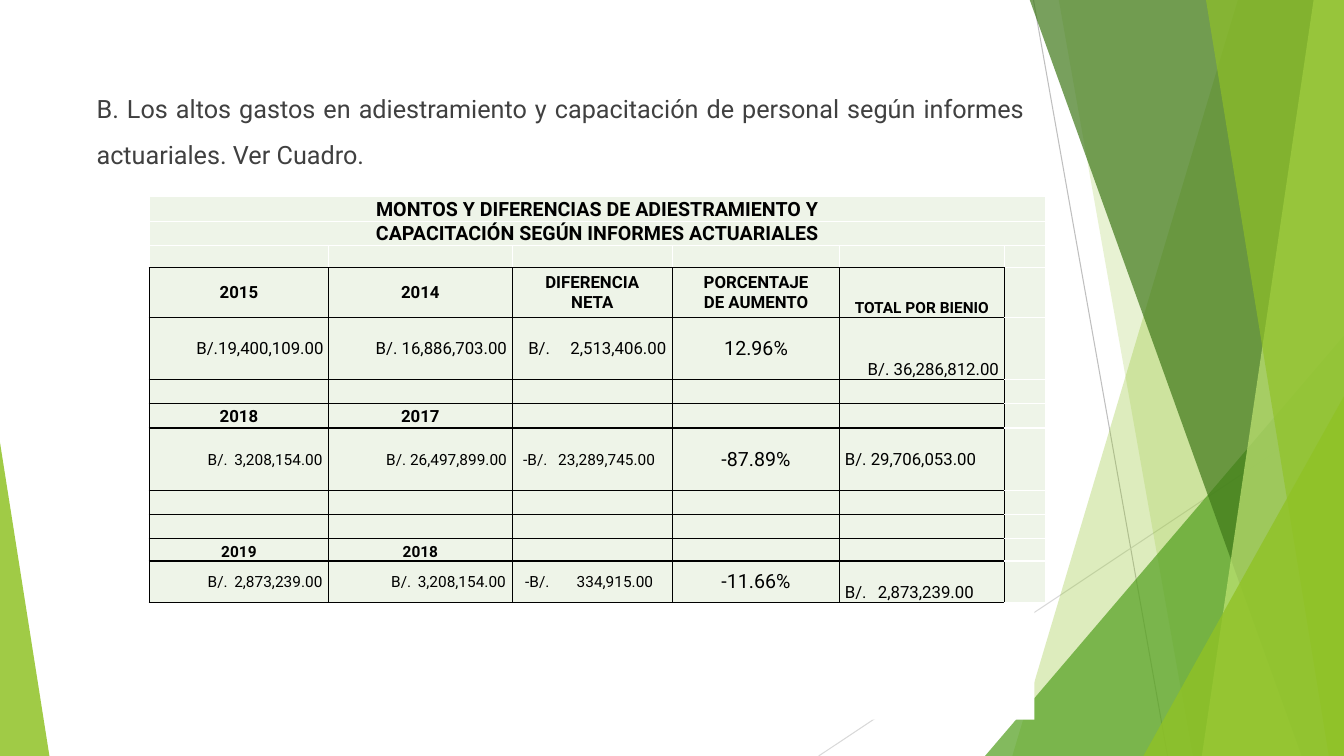
from dataclasses import dataclass

from lxml import etree
from pptx import Presentation
from pptx.dml.color import RGBColor
from pptx.enum.shapes import MSO_CONNECTOR, MSO_SHAPE
from pptx.enum.text import MSO_ANCHOR, PP_ALIGN
from pptx.oxml.ns import qn
from pptx.util import Inches, Pt

STRAIGHT = MSO_CONNECTOR.STRAIGHT
TRIANGLE = MSO_SHAPE.ISOSCELES_TRIANGLE
LEFT, CENTER, RIGHT, JUSTIFY = PP_ALIGN.LEFT, PP_ALIGN.CENTER, PP_ALIGN.RIGHT, PP_ALIGN.JUSTIFY
MIDDLE, BOTTOM = MSO_ANCHOR.MIDDLE, MSO_ANCHOR.BOTTOM


@dataclass(frozen=True)
class Theme:
    font: str = "Roboto"
    lime: str = "90C226"
    pale_lime: str = "C0E474"
    green: str = "54A021"
    forest: str = "3F7819"
    white: str = "FFFFFF"
    black: str = "000000"
    body_text: str = "404040"
    cell: str = "EEF4E8"
    dark_rule: str = "BFBFBF"
    light_rule: str = "D9D9D9"
    body: int = 18
    large: int = 14
    normal: int = 12
    small: int = 11


T = Theme()


@dataclass
class Entry:
    """Cell content; tab = (start, end) sets the text start and a right tab stop."""
    text: str = ""
    size: int = T.small
    align: PP_ALIGN = CENTER
    bold: bool = False
    anchor: MSO_ANCHOR = MIDDLE
    tab: tuple = None


class SlideBuilder:
    def __init__(self, slide, theme):
        self.s, self.t = slide, theme

    def style_text(self, p, size, color, bold=False):
        f = p.font
        f.name, f.size, f.bold = self.t.font, Pt(size), bold
        f.color.rgb = RGBColor.from_string(color)

    def paint(self, sp, color, opacity):
        sp.shadow.inherit = False
        sp.line.fill.background()
        sp.fill.solid()
        sp.fill.fore_color.rgb = RGBColor.from_string(color)
        clr = sp.fill._xPr.find(f".//{qn('a:srgbClr')}")
        etree.SubElement(clr, qn("a:alpha"), val=str(opacity * 1000))

    def line(self, start, end, color):
        c = self.s.shapes.add_connector(STRAIGHT, *map(Inches, start + end))
        c.line.color.rgb = RGBColor.from_string(color)
        c.line.width = Pt(0.75)
        etree.SubElement(c._element.spPr, qn("a:effectLst"))

    def polygon(self, points, color, opacity):
        pts = [(Inches(x), Inches(y)) for x, y in points]
        fb = self.s.shapes.build_freeform(*pts[0])
        fb.add_line_segments(pts[1:], close=True)
        self.paint(fb.convert_to_shape(), color, opacity)

    def triangle(self, box, apex, color, opacity):
        sp = self.s.shapes.add_shape(TRIANGLE, *map(Inches, box))
        sp.adjustments[0] = apex
        self.paint(sp, color, opacity)

    def body_text(self, box, text):
        sp = self.s.shapes.add_textbox(*map(Inches, box))
        sp.fill.solid()
        sp.fill.fore_color.rgb = RGBColor.from_string(self.t.white)
        tf = sp.text_frame
        tf.word_wrap = True
        p = tf.paragraphs[0]
        p.text, p.alignment = text, JUSTIFY
        p.line_spacing, p.space_before = 1.5, Pt(10)
        self.style_text(p, self.t.body, self.t.body_text)

    def borders(self, cell, colors):
        """Draw the left, right, top and bottom borders in the given colours."""
        tcPr = cell._tc.get_or_add_tcPr()
        for i, (side, color) in enumerate(zip("LRTB", colors)):
            ln = etree.Element(qn(f"a:ln{side}"), w=str(Pt(1)))
            fill = etree.SubElement(ln, qn("a:solidFill"))
            etree.SubElement(fill, qn("a:srgbClr"), val=color)
            tcPr.insert(i, ln)

    def fill_cell(self, cell, entry):
        cell.fill.solid()
        cell.fill.fore_color.rgb = RGBColor.from_string(self.t.cell)
        start, end = entry.tab or (0.05, None)
        cell.margin_left, cell.margin_right = Inches(start), Inches(0.05)
        cell.margin_top, cell.margin_bottom = Inches(0.01), 0
        cell.vertical_anchor = entry.anchor
        tf = cell.text_frame
        tf.text = entry.text
        for p in tf.paragraphs:
            p.alignment = LEFT if entry.tab else entry.align
            self.style_text(p, entry.size, self.t.black, entry.bold)
            if not entry.text:
                etree.SubElement(p._p, qn("a:endParaRPr"), sz=str(entry.size * 100))
            if entry.tab:
                tabs = etree.Element(qn("a:tabLst"))
                etree.SubElement(tabs, qn("a:tab"), pos=str(Inches(end - start)), algn="r")
                p._p.get_or_add_pPr().insert(0, tabs)

    def table(self, left, top, widths, heights, rows, title_rows):
        """Title rows span the table; the last column and the row under the title are ungridded."""
        n, m = len(heights), len(widths)
        frame = self.s.shapes.add_table(n, m, Inches(left), Inches(top),
                                        Inches(sum(widths)), Inches(sum(heights)))
        tbl = frame.table
        tbl.first_row = tbl.horz_banding = False
        for col, w in zip(tbl.columns, widths):
            col.width = Inches(w)
        white, black = self.t.white, self.t.black
        for i, (row, h) in enumerate(zip(rows, heights)):
            tbl.rows[i].height = Inches(h)
            for j in range(m):
                cell = tbl.cell(i, j)
                self.fill_cell(cell, row[j] if j < len(row) else Entry())
                if j == m - 1:
                    colors = [black if i > title_rows else white] + [white] * 3
                elif i <= title_rows:
                    colors = [white] * 3 + [black if i == title_rows else white]
                else:
                    colors = [black] * 4
                self.borders(cell, colors)
            if i < title_rows:
                tbl.cell(i, 0).merge(tbl.cell(i, m - 1))


def title(text):
    return [Entry(text, T.large, bold=True, anchor=BOTTOM)]


def head(text, size=T.normal, anchor=MIDDLE):
    return Entry(text, size, bold=True, anchor=anchor)


def amount(text, size=T.normal, align=RIGHT, anchor=MIDDLE, tab=None):
    return Entry(text, size, align, anchor=anchor, tab=tab)


def percent(text):
    return Entry(text, T.large)


ROWS = [
    title("MONTOS Y DIFERENCIAS DE ADIESTRAMIENTO Y"),
    title("CAPACITACIÓN SEGÚN INFORMES ACTUARIALES"),
    [],
    [head("2015"), head("2014"), head("DIFERENCIA\nNETA"), head("PORCENTAJE\nDE AUMENTO"),
     head("TOTAL POR BIENIO", T.small, BOTTOM)],
    [amount("B/.19,400,109.00"), amount("B/. 16,886,703.00"),
     amount("B/.\t2,513,406.00", tab=(0.16, 1.53)), percent("12.96%"),
     amount("B/. 36,286,812.00", anchor=BOTTOM)],
    [],
    [head("2018"), head("2017")],
    [amount("B/.\t3,208,154.00", T.small, tab=(0.58, 1.72)),
     amount("B/. 26,497,899.00", T.small),
     amount("-B/.\t23,289,745.00", T.small, tab=(0.11, 1.42)), percent("-87.89%"),
     amount("B/. 29,706,053.00", align=LEFT)],
    [],
    [],
    [head("2019", T.small, BOTTOM), head("2018", T.small, BOTTOM)],
    [amount("B/.\t2,873,239.00", T.small, tab=(0.58, 1.72)),
     amount("B/.\t3,208,154.00", T.small, tab=(0.62, 1.76)),
     amount("-B/.\t334,915.00", T.small, tab=(0.13, 1.4)), percent("-11.66%"),
     amount("B/.\t2,873,239.00", anchor=BOTTOM, tab=(0.05, 1.33))],
]
WIDTHS = [1.78, 1.82, 1.59, 1.66, 1.63, 0.41]
HEIGHTS = [0.24, 0.24, 0.22, 0.49, 0.62, 0.24, 0.24, 0.62, 0.24, 0.24, 0.22, 0.41]


def main():
    prs = Presentation()
    prs.slide_width, prs.slide_height = Inches(13.33), Inches(7.5)
    b = SlideBuilder(prs.slides.add_slide(prs.slide_layouts[6]), T)

    def band(top_x, bottom_x, color, opacity):
        """Band from a slanted left edge to the right side of the slide."""
        b.polygon([(top_x, -0.01), (13.33, -0.01), (13.33, 7.5), (bottom_x, 7.5)], color, opacity)

    b.line((10.25, 0), (11.58, 7.5), T.dark_rule)
    b.line((13.33, 4.03), (8.12, 7.5), T.light_rule)
    band(12.28, 10.04, T.lime, 30)
    band(10.5, 11.83, T.lime, 20)
    b.triangle((9.77, 3.33, 3.56, 4.17), 1, T.green, 72)
    band(10.21, 12.91, T.forest, 70)
    band(13.03, 11.92, T.pale_lime, 70)
    band(11.96, 13.18, T.lime, 65)
    b.triangle((11.34, 3.93, 1.99, 3.57), 1, T.lime, 80)
    b.triangle((0, 4.39, 0.49, 3.11), 0, T.lime, 85)
    b.body_text((0.86, 0.73, 9.4, 6.41),
                "B. Los altos gastos en adiestramiento y capacitación de personal "
                "según informes actuariales. Ver Cuadro.")
    b.table(1.48, 1.95, WIDTHS, HEIGHTS, ROWS, title_rows=2)
    prs.save("out.pptx")


if __name__ == "__main__":
    main()
